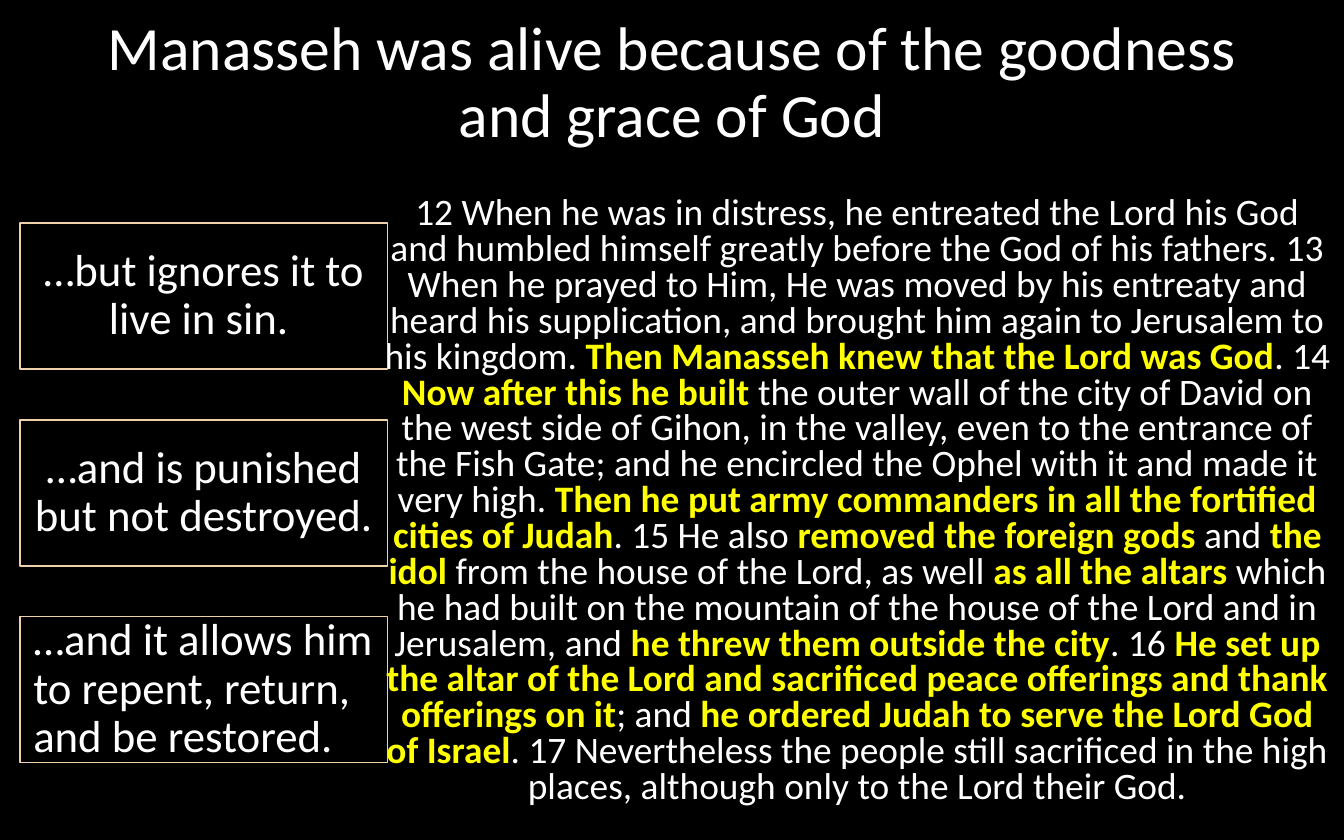
from pptx import Presentation
from pptx.dml.color import RGBColor
from pptx.enum.shapes import MSO_SHAPE
from pptx.enum.text import MSO_ANCHOR as ANCHOR, PP_ALIGN as ALIGN
from pptx.util import Cm, Pt

WHITE, YELLOW, TAN, BLACK = "FFFFFF", "FFFF00", "EED1AB", "000000"


def color(hex_string):
    return RGBColor.from_string(hex_string)


def write(sp, parts, size, spacing, before=0, align=ALIGN.CENTER):
    """Fill a shape with one paragraph; every second part is highlighted."""
    tf = sp.text_frame
    tf.word_wrap = True
    tf.vertical_anchor = ANCHOR.MIDDLE
    p = tf.paragraphs[0]
    p.alignment = align
    p.line_spacing = spacing
    p.space_before = Pt(before)
    p.font.name = "Calibri"
    p.font.size = Pt(size)
    for i, part in enumerate(parts):
        r = p.add_run()
        r.text = part
        r.font.bold = i % 2 == 1
        r.font.color.rgb = color(YELLOW if i % 2 else WHITE)


prs = Presentation()
prs.slide_width, prs.slide_height = Cm(25.4), Cm(15.88)
s = prs.slides.add_slide(prs.slide_layouts[6])
s.background.fill.solid()
s.background.fill.fore_color.rgb = color(BLACK)

# Title
title = s.shapes.add_textbox(Cm(1.75), Cm(0.05), Cm(21.9), Cm(3.07))
write(title, ["Manasseh was alive because of the goodness and grace of God"], 33, 0.9)

# Scripture passage, plain and highlighted parts in turn
passage = [
    "12 When he was in distress, he entreated the Lord his God and humbled himself "
    "greatly before the God of his fathers. 13 When he prayed to Him, He was moved by "
    "his entreaty and heard his supplication, and brought him again to Jerusalem to his "
    "kingdom. ",
    "Then Manasseh knew that the Lord was God",
    ". 14 ",
    "Now after this he built ",
    "the outer wall of the city of David on the west side of Gihon, in the valley, even "
    "to the entrance of the Fish Gate; and he encircled the Ophel with it and made it "
    "very high. ",
    "Then he put army commanders in all the fortified cities of Judah",
    ". 15 He also ",
    "removed the foreign gods ",
    "and ",
    "the idol",
    " from the house of the Lord, as well ",
    "as all the altars ",
    "which he had built on the mountain of the house of the Lord and in Jerusalem, and ",
    "he threw them outside the city",
    ". 16 ",
    "He set up the altar of the Lord and sacrificed peace offerings and thank offerings "
    "on it",
    "; and ",
    "he ordered Judah to serve the Lord God of Israel",
    ". 17 Nevertheless the people still sacrificed in the high places, although only to "
    "the Lord their God.",
]
body = s.shapes.add_textbox(Cm(7.01), Cm(3.1), Cm(18.39), Cm(12.78))
write(body, passage, 20, 0.8, 7.5)

# Outlined statements down the left side
statements = [
    ("…but ignores it to live in sin. ", ALIGN.CENTER),
    ("…and is punished but not destroyed. ", ALIGN.CENTER),
    ("…and it allows him to repent, return, and be restored.", ALIGN.LEFT),
]
for i, (text, align) in enumerate(statements):
    sp = s.shapes.add_shape(MSO_SHAPE.RECTANGLE, Cm(0.38), Cm(4.22 + 3.72 * i),
                            Cm(6.94), Cm(2.76))
    sp.shadow.inherit = False
    sp.fill.background()
    sp.line.color.rgb = color(TAN)
    sp.line.width = Pt(0.75)
    write(sp, [text], 24, 0.9, 7.5, align)

prs.save("out.pptx")
